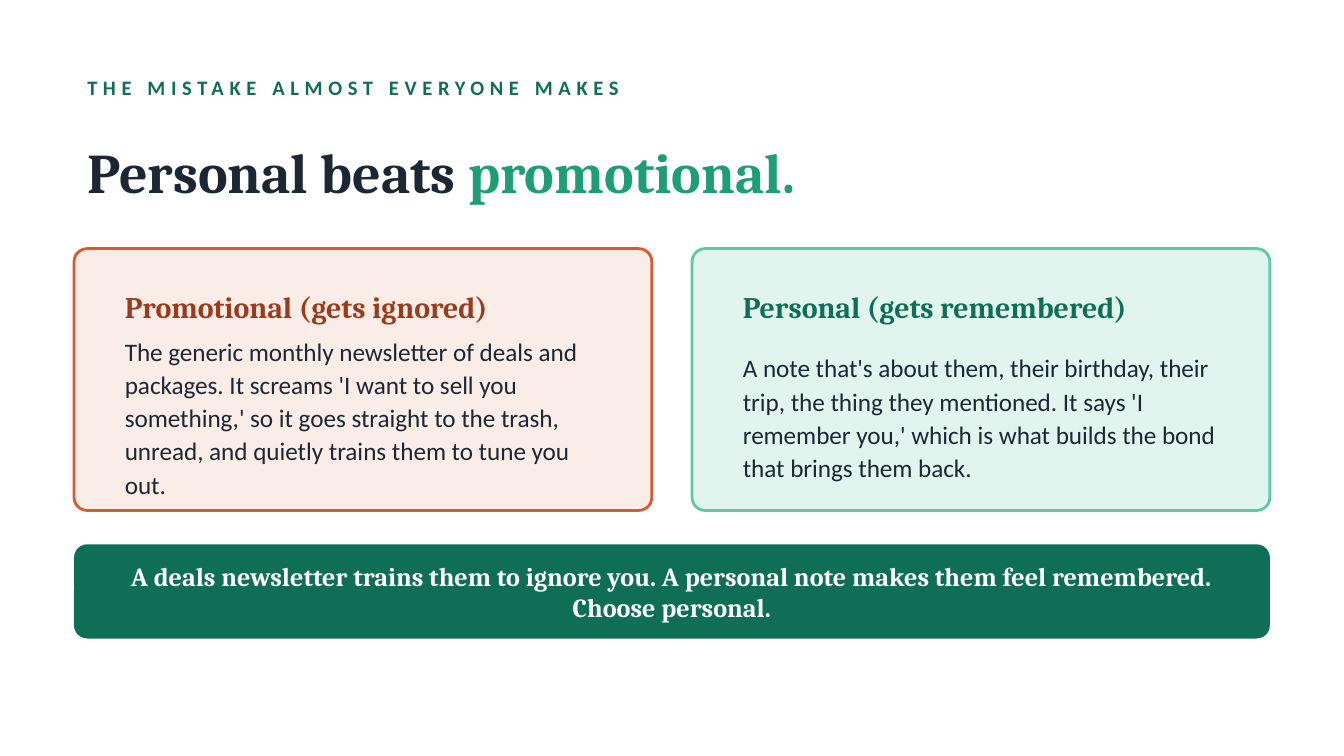
from pptx import Presentation
from pptx.dml.color import RGBColor as Rgb
from pptx.enum.shapes import MSO_SHAPE as Shape
from pptx.enum.text import MSO_ANCHOR as Anchor, PP_ALIGN as Align
from pptx.util import Cm, Pt

INK, GREEN, WHITE = "1C2733", "0F6E56", "FFFFFF"
SANS, SERIF = "Calibri", "Cambria"

LABEL = "THE MISTAKE ALMOST EVERYONE MAKES"
TITLE = [("Personal beats ", INK), ("promotional.", "1D9E75")]
CARDS = [
    ("Promotional (gets ignored)",
     "The generic monthly newsletter of deals and packages. It screams "
     "'I want to sell you something,' so it goes straight to the trash, "
     "unread, and quietly trains them to tune you out.",
     "FAECE7", "D85A30", "993C1D"),
    ("Personal (gets remembered)",
     "A note that's about them, their birthday, their trip, the thing they "
     "mentioned. It says 'I remember you,' which is what builds the bond "
     "that brings them back.",
     "E1F5EE", "5DCAA5", GREEN),
]
CLOSE = ("A deals newsletter trains them to ignore you. "
         "A personal note makes them feel remembered. Choose personal.")

WIDE, HIGH = 25.4, 14.29
EDGE, GAP, PAD, ROUND = 1.4, 0.76, 0.71, 0.25
SPAN = WIDE - 2 * EDGE
CARD = (SPAN - GAP * (len(CARDS) - 1)) / len(CARDS)


def color(code):
    return Rgb.from_string(code)


def add_text(slide, box, parts, face, size, bold=True):
    frame = slide.shapes.add_textbox(*map(Cm, box)).text_frame
    frame.word_wrap = True
    frame.vertical_anchor = Anchor.MIDDLE
    para = frame.paragraphs[0]
    for text, tint in parts:
        run = para.add_run()
        run.text = text
        font = run.font
        font.name, font.size, font.bold = face, Pt(size), bold
        font.color.rgb = color(tint)
    return para


def add_panel(slide, box, fill, edge=None):
    panel = slide.shapes.add_shape(Shape.ROUNDED_RECTANGLE, *map(Cm, box))
    panel.adjustments[0] = ROUND / box[3]
    panel.shadow.inherit = False
    panel.fill.solid()
    panel.fill.fore_color.rgb = color(fill)
    if edge:
        panel.line.color.rgb = color(edge)
        panel.line.width = Pt(1.5)
    else:
        panel.line.fill.background()


def main():
    deck = Presentation()
    deck.slide_width, deck.slide_height = Cm(WIDE), Cm(HIGH)
    slide = deck.slides.add_slide(deck.slide_layouts[6])

    label = add_text(slide, (EDGE, 1.27, SPAN, 0.76), [(LABEL, GREEN)], SANS, 11)
    label.runs[0]._r.get_or_add_rPr().set("spc", "300")
    add_text(slide, (EDGE, 2.16, SPAN, 2.16), TITLE, SERIF, 30)

    for i, (head, body, fill, edge, tint) in enumerate(CARDS):
        left = EDGE + i * (CARD + GAP)
        inner, width = left + PAD, 9.65
        add_panel(slide, (left, 4.7, CARD, 4.95), fill, edge)
        add_text(slide, (inner, 5.16, width, 1.27), [(head, tint)], SERIF, 16)
        para = add_text(slide, (inner, 6.53, width, 2.67), [(body, INK)],
                        SANS, 13.5, False)
        para.line_spacing = 1.1

    top, tall, inset = 10.29, 1.78, 0.63
    add_panel(slide, (EDGE, top, SPAN, tall), GREEN)
    para = add_text(slide, (EDGE + inset, top, SPAN - 2 * inset, tall),
                    [(CLOSE, WHITE)], SERIF, 14)
    para.alignment = Align.CENTER

    deck.save("out.pptx")


if __name__ == "__main__":
    main()
